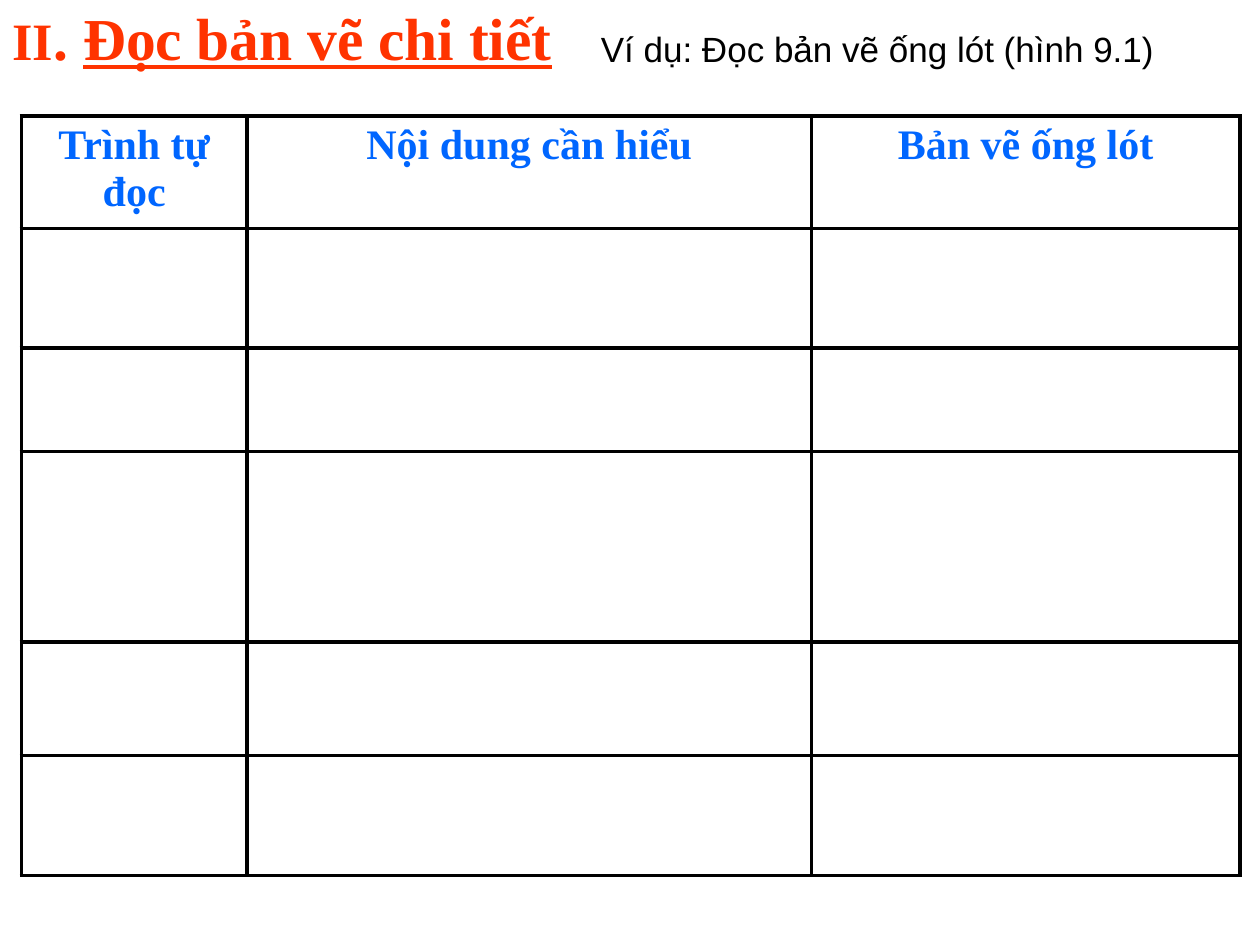
import pptx
import pptx.dml.color
import pptx.enum.text
import pptx.oxml
import pptx.oxml.ns
import pptx.util
from pptx.util import Inches

SERIF = "Times New Roman"
HEADERS = ["Trình tự đọc", "Nội dung cần hiểu", "Bản vẽ ống lót"]
COLUMN_WIDTHS = [1.79, 4.48, 3.4]
ROW_HEIGHTS = [0.89, 0.95, 0.82, 1.51, 0.9, 0.95]


def color(value):
    return pptx.dml.color.RGBColor.from_string(value)


def add_run(paragraph, text, size, font, fill, bold=False, underline=False):
    run = paragraph.add_run()
    run.text = text
    run.font.size = pptx.util.Pt(size)
    run.font.name = font
    run.font.color.rgb = color(fill)
    run.font.bold = bold
    run.font.underline = underline


def set_hanging_indent(paragraph, indent):
    properties = paragraph._p.get_or_add_pPr()
    properties.set("marL", str(Inches(indent)))
    properties.set("indent", str(-Inches(indent)))


def set_borders(cell, line_color, width):
    properties = cell._tc.get_or_add_tcPr()
    for position, side in enumerate(("lnL", "lnR", "lnT", "lnB")):
        border = pptx.oxml.parse_xml(
            f'<a:{side} {pptx.oxml.ns.nsdecls("a")} w="{pptx.util.Pt(width)}">'
            f'<a:solidFill><a:srgbClr val="{line_color}"/></a:solidFill></a:{side}>'
        )
        properties.insert(position, border)


def place_title(slide, left, top, width, height):
    title = slide.shapes.title
    title.left, title.top, title.width, title.height = left, top, width, height
    frame = title.text_frame
    frame.word_wrap = True
    frame.auto_size = pptx.enum.text.MSO_AUTO_SIZE.NONE
    frame.vertical_anchor = pptx.enum.text.MSO_ANCHOR.MIDDLE
    paragraph = frame.paragraphs[0]
    paragraph.alignment = pptx.enum.text.PP_ALIGN.LEFT
    set_hanging_indent(paragraph, 1.22)
    add_run(paragraph, "II", 30, SERIF, "FF3300", bold=True)
    add_run(paragraph, ". ", 34, SERIF, "FF3300", bold=True)
    add_run(paragraph, "Đọc bản vẽ chi tiết", 34, SERIF, "FF3300", bold=True, underline=True)


def add_example(slide, left, top, width, height):
    frame = slide.shapes.add_textbox(left, top, width, height).text_frame
    frame.word_wrap = True
    paragraph = frame.paragraphs[0]
    set_hanging_indent(paragraph, 0.38)
    add_run(paragraph, "Ví dụ: Đọc bản vẽ ống lót (hình 9.1)", 20, "Arial", "000000")


def add_reading_table(slide, left, top, width, height):
    table = slide.shapes.add_table(
        len(ROW_HEIGHTS), len(COLUMN_WIDTHS), left, top, width, height
    ).table
    table.first_row = False
    table.horz_banding = False
    for column, share in zip(table.columns, COLUMN_WIDTHS):
        column.width = int(width * share / sum(COLUMN_WIDTHS))
    for row, share in zip(table.rows, ROW_HEIGHTS):
        row.height = int(height * share / sum(ROW_HEIGHTS))
    for cell in table.iter_cells():
        cell.fill.background()
        set_borders(cell, "000000", 2.25)
    for cell, header in zip(table.rows[0].cells, HEADERS):
        paragraph = cell.text_frame.paragraphs[0]
        paragraph.alignment = pptx.enum.text.PP_ALIGN.CENTER
        add_run(paragraph, header, 24, SERIF, "0066FF", bold=True)


def main():
    presentation = pptx.Presentation()
    presentation.slide_width = Inches(10)
    presentation.slide_height = Inches(7.5)
    slide = presentation.slides.add_slide(presentation.slide_layouts[5])
    place_title(slide, Inches(0), Inches(0), Inches(7.5), Inches(0.58))
    add_reading_table(slide, Inches(0.17), Inches(0.92), Inches(9.67), Inches(6.03))
    add_example(slide, Inches(4.67), Inches(0.17), Inches(5.33), Inches(0.67))
    presentation.save("out.pptx")


if __name__ == "__main__":
    main()
